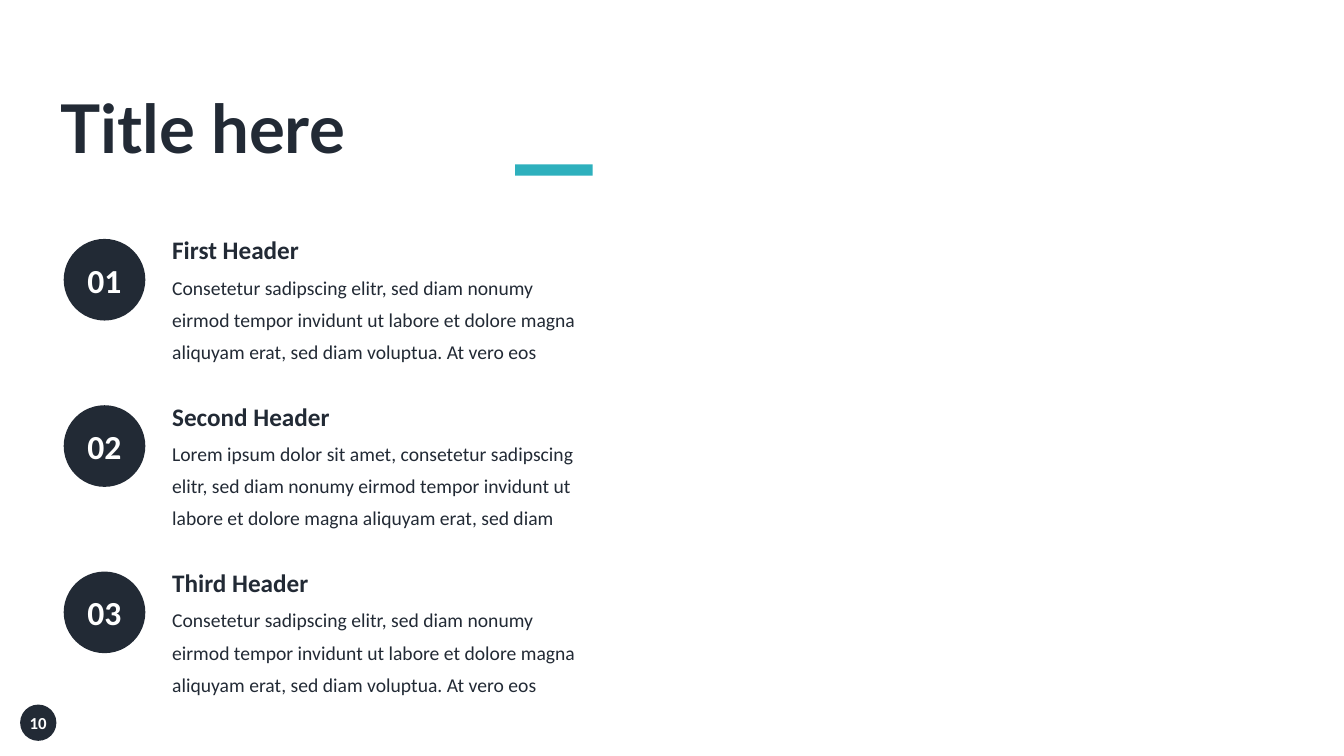
import pptx
import pptx.dml.color
import pptx.enum.shapes
import pptx.enum.text
import pptx.util

Pt = pptx.util.Pt
SHAPES = pptx.enum.shapes.MSO_SHAPE
ALIGN = pptx.enum.text.PP_ALIGN
ANCHOR = pptx.enum.text.MSO_ANCHOR

NAVY = pptx.dml.color.RGBColor(0x22, 0x2A, 0x35)
TEAL = pptx.dml.color.RGBColor(0x2E, 0xB0, 0xBD)
WHITE = pptx.dml.color.RGBColor(0xFF, 0xFF, 0xFF)

ROW_TOP = 162.72
ROW_PITCH = 118.8
SHORT_COPY = ("Consetetur sadipscing elitr, sed diam nonumy eirmod tempor invidunt ut "
              "labore et dolore magna aliquyam erat, sed diam voluptua. At vero eos")
LONG_COPY = ("Lorem ipsum dolor sit amet, consetetur sadipscing elitr, sed diam nonumy "
             "eirmod tempor invidunt ut labore et dolore magna aliquyam erat, sed diam")
ROWS = [
    ("01", "First Header", SHORT_COPY),
    ("02", "Second Header", LONG_COPY),
    ("03", "Third Header", SHORT_COPY),
]

deck = pptx.Presentation()
deck.slide_width = Pt(960)
deck.slide_height = Pt(540)
page = deck.slides.add_slide(deck.slide_layouts[6])


def add_text(text, left, top, width, height, size, font="Calibri", bold=True, spacing=None):
    box = page.shapes.add_textbox(Pt(left), Pt(top), Pt(width), Pt(height))
    box.text_frame.word_wrap = True
    para = box.text_frame.paragraphs[0]
    if spacing:
        para.line_spacing = Pt(spacing)
    span = para.add_run()
    span.text = text
    span.font.name = font
    span.font.size = Pt(size)
    span.font.bold = bold
    span.font.color.rgb = NAVY


def add_block(kind, left, top, width, height, fill, text="", size=12):
    """Add a borderless filled shape, with an optional centred white label."""
    shape = page.shapes.add_shape(kind, Pt(left), Pt(top), Pt(width), Pt(height))
    shape.shadow.inherit = False
    shape.fill.solid()
    shape.fill.fore_color.rgb = fill
    shape.line.fill.background()
    if text:
        frame = shape.text_frame
        frame.margin_left = frame.margin_right = frame.margin_top = frame.margin_bottom = 0
        frame.word_wrap = False
        frame.vertical_anchor = ANCHOR.MIDDLE
        para = frame.paragraphs[0]
        para.alignment = ALIGN.CENTER
        span = para.add_run()
        span.text = text
        span.font.name = "Calibri"
        span.font.size = Pt(size)
        span.font.bold = True
        span.font.color.rgb = WHITE


add_block(SHAPES.OVAL, 14.4, 503.28, 25.92, 25.92, NAVY, text="10", size=12)

for index, (number, header, copy_text) in enumerate(ROWS):
    top = ROW_TOP + index * ROW_PITCH
    add_text(copy_text, 115.92, top + 24.48, 305.28, 77.04, 14, bold=False, spacing=23)
    add_text(header, 115.92, top, 272.88, 30.24, 18, spacing=23)
    add_block(SHAPES.OVAL, 45.5, top + 7.92, 58.32, 58.32, NAVY, text=number, size=24)

add_block(SHAPES.RECTANGLE, 367.92, 117.36, 55.44, 8.2, TEAL)
add_text("Title here", 36, 58.32, 486, 31.68, 48, font="Lato")

deck.save("out.pptx")
